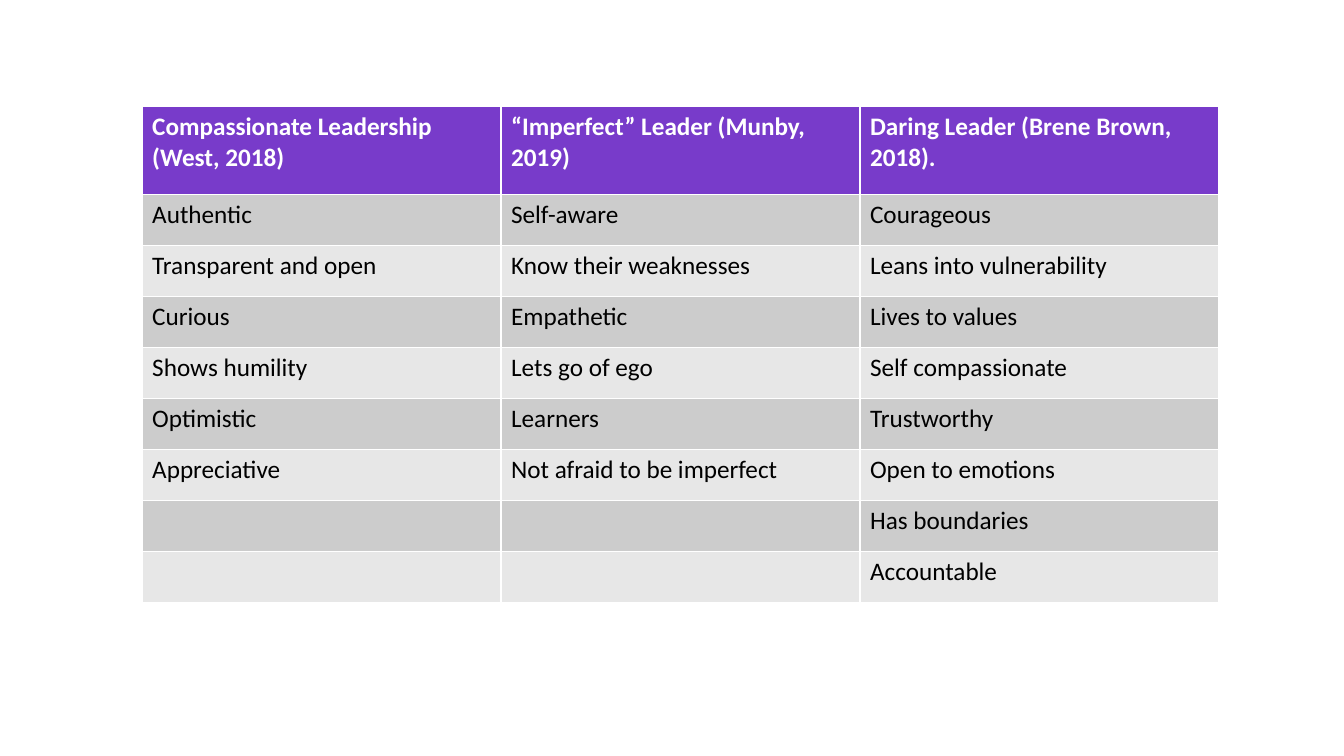
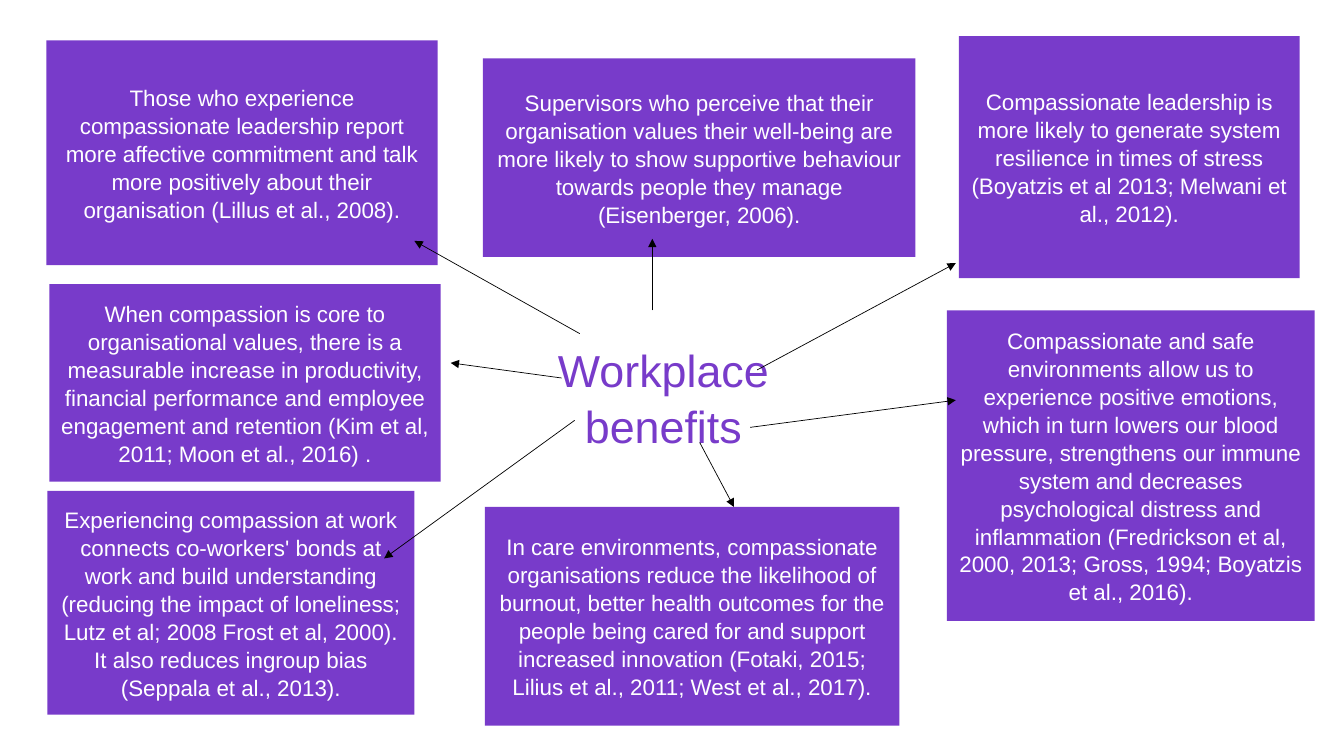
from dataclasses import dataclass
from typing import NamedTuple

from lxml import etree
from pptx import Presentation
from pptx import util as u
from pptx.dml import color
from pptx.enum import shapes, text
from pptx.oxml import ns

PX = u.Inches(1) // 100


class Box(NamedTuple):
    x: int
    y: int
    w: int
    h: int


class Benefit(NamedTuple):
    """A statement, its box and its arrow, measured from the map's corner."""
    box: Box
    start: tuple
    end: tuple
    statement: str


@dataclass(frozen=True)
class Theme:
    purple: str = "783BCA"
    white: str = "FFFFFF"
    black: str = "000000"
    bands: tuple = ("CCCCCC", "E7E7E7")
    table_font: str = "Calibri"
    map_font: str = "Arial"
    table_size: int = 18
    statement_size: int = 16
    title_size: int = 32
    arrow_width: float = 0.5
    map_spacing: float = 1.04


THEME = Theme()
SLIDE = Box(0, 0, 1333, 750)
TABLE = Box(141, 106, 1068, 492)
MAP = Box(46, 36, 1258, 684)
HEADER_HEIGHT = 87
MAP_TITLE = Box(466, 297, 292, 118)

LEADERSHIP_STYLES = {
    "Compassionate Leadership (West, 2018)": [
        "Authentic", "Transparent and open", "Curious", "Shows humility",
        "Optimistic", "Appreciative"],
    "“Imperfect” Leader (Munby, 2019)": [
        "Self-aware", "Know their weaknesses", "Empathetic", "Lets go of ego",
        "Learners", "Not afraid to be imperfect"],
    "Daring Leader (Brene Brown, 2018).": [
        "Courageous", "Leans into vulnerability", "Lives to values",
        "Self compassionate", "Trustworthy", "Open to emotions",
        "Has boundaries", "Accountable"],
}

BENEFITS = [
    Benefit(Box(0, 4, 388, 223), (529, 295), (365, 203),
            "Those who experience compassionate leadership report more "
            "affective commitment and talk more positively about their "
            "organisation (Lillus et al., 2008)."),
    Benefit(Box(433, 22, 429, 197), (601, 272), (601, 201),
            "Supervisors who perceive that their organisation values their "
            "well-being are more likely to show supportive behaviour towards "
            "people they manage (Eisenberger, 2006)."),
    Benefit(Box(905, 0, 338, 240), (705, 331), (902, 225),
            "Compassionate leadership is more likely to generate system "
            "resilience in times of stress (Boyatzis et al 2013; Melwani et "
            "al., 2012)."),
    Benefit(Box(3, 246, 388, 196), (511, 339), (401, 324),
            "When compassion is core to organisational values, there is a "
            "measurable increase in productivity, financial performance and "
            "employee engagement and retention (Kim et al, 2011; Moon et al., "
            "2016) ."),
    Benefit(Box(1, 451, 364, 222), (524, 381), (335, 518),
            "Experiencing compassion at work connects co-workers' bonds at "
            "work and build understanding (reducing the impact of loneliness; "
            "Lutz et al; 2008 Frost et al, 2000). It also reduces ingroup "
            "bias (Seppala et al., 2013)."),
    Benefit(Box(893, 272, 365, 308), (698, 388), (902, 361),
            "Compassionate and safe environments allow us to experience "
            "positive emotions, which in turn lowers our blood pressure, "
            "strengthens our immune system and decreases psychological "
            "distress and inflammation (Fredrickson et al, 2000, 2013; Gross, "
            "1994; Boyatzis et al., 2016)."),
    Benefit(Box(435, 467, 411, 217), (648, 403), (682, 467),
            "In care environments, compassionate organisations reduce the "
            "likelihood of burnout, better health outcomes for the people "
            "being cared for and support increased innovation (Fotaki, 2015; "
            "Lilius et al., 2011; West et al., 2017)."),
]


def emu(lengths):
    return [length * PX for length in lengths]


def within(area, part):
    return Box(area.x + part.x, area.y + part.y, part.w, part.h)


def apply(target, **values):
    for name, value in values.items():
        setattr(target, name, value)


def paint(fill, rgb):
    fill.solid()
    fill.fore_color.rgb = color.RGBColor.from_string(rgb)


def style_font(font, name, size, rgb, bold=False):
    apply(font, name=name, size=u.Pt(size), bold=bold)
    font.color.rgb = color.RGBColor.from_string(rgb)


def write_centred(frame, words, size, rgb, anchor):
    apply(frame, text=words, word_wrap=True, vertical_anchor=anchor,
          auto_size=text.MSO_AUTO_SIZE.NONE)
    paragraph = frame.paragraphs[0]
    apply(paragraph, alignment=text.PP_ALIGN.CENTER,
          line_spacing=THEME.map_spacing)
    style_font(paragraph.font, THEME.map_font, size, rgb)


def add_leadership_table(slide, box, styles):
    columns = list(styles.values())
    row_count = max(map(len, columns))
    table = slide.shapes.add_table(row_count + 1, len(columns), *emu(box)).table
    for column in table.columns:
        column.width = box.w * PX // len(columns)
    for row in table.rows:
        row.height = (box.h - HEADER_HEIGHT) * PX // row_count
    table.rows[0].height = HEADER_HEIGHT * PX

    for c, (heading, traits) in enumerate(styles.items()):
        for r in range(row_count + 1):
            is_heading = r == 0
            cell = table.cell(r, c)
            if is_heading:
                cell.text = heading
            elif r <= len(traits):
                cell.text = traits[r - 1]
            paint(cell.fill, THEME.purple if is_heading
                  else THEME.bands[(r - 1) % len(THEME.bands)])
            style_font(cell.text_frame.paragraphs[0].font, THEME.table_font,
                       THEME.table_size,
                       THEME.white if is_heading else THEME.black, is_heading)


def add_statement(slide, box, statement):
    panel = slide.shapes.add_shape(shapes.MSO_SHAPE.RECTANGLE, *emu(box))
    panel.shadow.inherit = False
    paint(panel.fill, THEME.purple)
    panel.line.fill.background()
    write_centred(panel.text_frame, statement, THEME.statement_size,
                  THEME.white, text.MSO_ANCHOR.MIDDLE)


def add_arrow(slide, area, start, end):
    points = [area.x + start[0], area.y + start[1],
              area.x + end[0], area.y + end[1]]
    arrow = slide.shapes.add_connector(shapes.MSO_CONNECTOR.STRAIGHT,
                                       *emu(points))
    arrow.line.width = u.Pt(THEME.arrow_width)
    paint(arrow.line.fill, THEME.black)
    etree.SubElement(arrow.line._get_or_add_ln(), ns.qn("a:tailEnd"),
                     type="triangle")
    etree.SubElement(arrow._element.spPr, ns.qn("a:effectLst"))


def add_benefits_map(slide, area, heading, benefits):
    title = slide.shapes.title
    left, top, width, height = emu(within(area, MAP_TITLE))
    apply(title, left=left, top=top, width=width, height=height)
    write_centred(title.text_frame, heading, THEME.title_size, THEME.purple,
                  text.MSO_ANCHOR.TOP)
    for benefit in benefits:
        add_statement(slide, within(area, benefit.box), benefit.statement)
    for benefit in benefits:
        add_arrow(slide, area, benefit.start, benefit.end)


def main():
    deck = Presentation()
    apply(deck, slide_width=SLIDE.w * PX, slide_height=SLIDE.h * PX)
    title_only, blank = deck.slide_layouts[5], deck.slide_layouts[6]
    add_leadership_table(deck.slides.add_slide(blank), TABLE,
                         LEADERSHIP_STYLES)
    add_benefits_map(deck.slides.add_slide(title_only), MAP,
                     "Workplace benefits", BENEFITS)
    deck.save("out.pptx")


if __name__ == "__main__":
    main()
